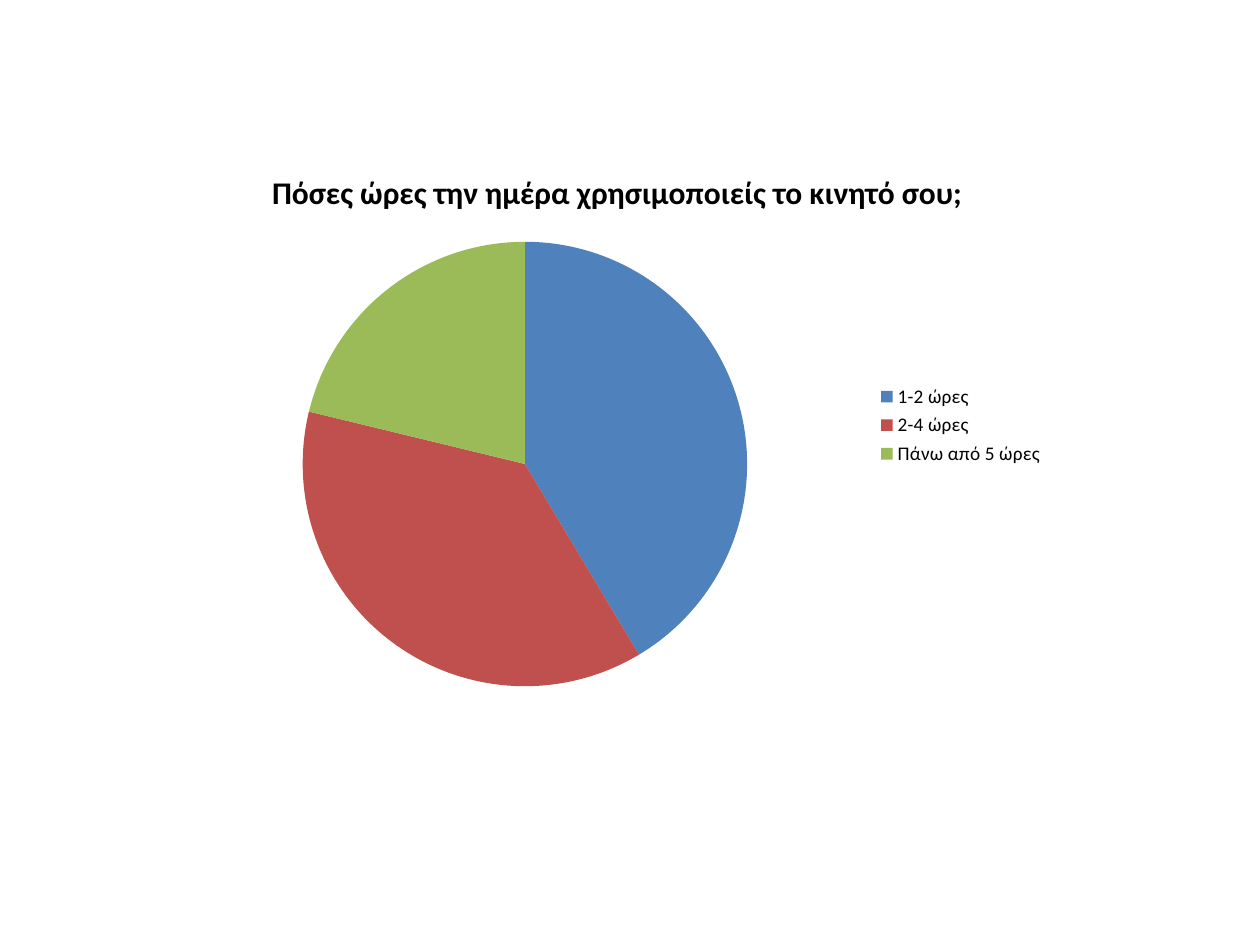
from lxml.etree import SubElement
from pptx import Presentation
from pptx.chart.data import CategoryChartData
from pptx.dml.color import RGBColor
from pptx.enum.chart import XL_CHART_TYPE, XL_LEGEND_POSITION
from pptx.oxml.ns import qn
from pptx.util import Inches, Pt

FONT = "Calibri"
INK = "000000"
QUESTION = "Πόσες ώρες την ημέρα χρησιμοποιείς το κινητό σου;"
# answer, share, slice colour
ANSWERS = [
    ("1-2 ώρες", 41, "4F81BD"),
    ("2-4 ώρες", 37, "C0504D"),
    ("Πάνω από 5 ώρες", 21, "9BBB59"),
]


def color(value):
    return RGBColor.from_string(value)


def style_font(font, size, bold=False):
    font.name = FONT
    font.size = Pt(size)
    font.bold = bold
    font.color.rgb = color(INK)


def place_plot(chart, left, top, width, height):
    """Fix the plot area, in shares of the chart's size."""
    plot_area = chart._chartSpace.chart.plotArea
    for old in plot_area.findall(qn("c:layout")):
        plot_area.remove(old)
    layout = SubElement(plot_area, qn("c:layout"))
    plot_area.insert(0, layout)
    manual = SubElement(layout, qn("c:manualLayout"))
    settings = [("layoutTarget", "inner"), ("xMode", "edge"), ("yMode", "edge"),
                ("x", left), ("y", top), ("w", width), ("h", height)]
    for name, value in settings:
        SubElement(manual, qn(f"c:{name}")).set("val", str(value))


def add_answer_pie(page, box):
    data = CategoryChartData()
    data.categories = [answer for answer, _, _ in ANSWERS]
    data.add_series(QUESTION, [share for _, share, _ in ANSWERS])
    chart = page.shapes.add_chart(XL_CHART_TYPE.PIE, *box, data).chart
    style_font(chart.font, 10)

    # Title
    chart.has_title = True
    para = chart.chart_title.text_frame.paragraphs[0]
    span = para.add_run()
    span.text = QUESTION
    style_font(span.font, 18, bold=True)
    chart.chart_title.include_in_layout = False

    # Legend
    chart.has_legend = True
    chart.legend.position = XL_LEGEND_POSITION.RIGHT
    chart.legend.include_in_layout = False
    style_font(chart.legend.font, 11)

    # Slices
    plot = chart.plots[0]
    plot.vary_by_categories = True
    for index, (_, _, tint) in enumerate(ANSWERS):
        fill = plot.series[0].points[index].format.fill
        fill.solid()
        fill.fore_color.rgb = color(tint)
    place_plot(chart, 0.14, 0.17, 0.51, 0.8)


def main():
    deck = Presentation()
    deck.slide_width, deck.slide_height = Inches(10), Inches(7.5)
    page = deck.slides.add_slide(deck.slide_layouts[6])
    add_answer_pie(page, [Inches(n) for n in (1.41, 1.17, 6.98, 4.41)])
    deck.save("out.pptx")


if __name__ == "__main__":
    main()
